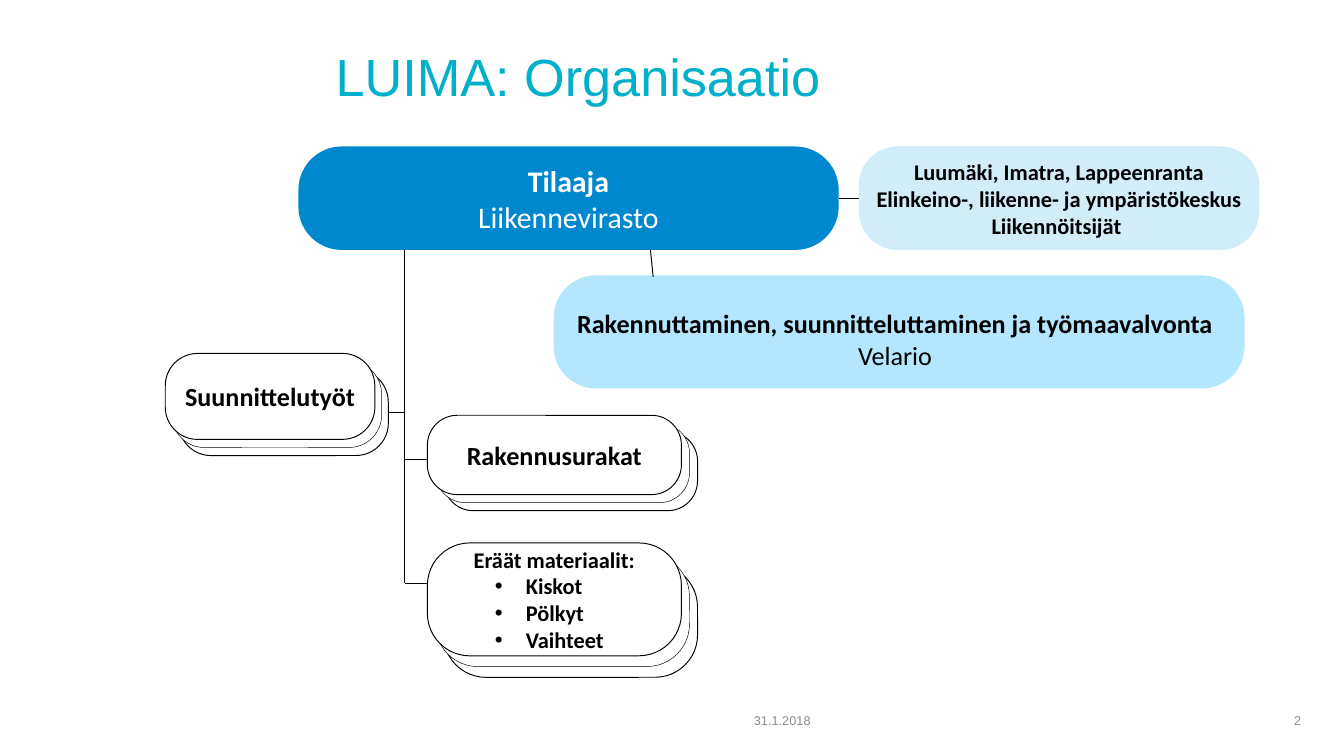
from lxml.etree import SubElement
from pptx import Presentation
from pptx.dml.color import RGBColor
from pptx.enum.shapes import MSO_CONNECTOR, MSO_SHAPE
from pptx.enum.text import MSO_ANCHOR, PP_ALIGN
from pptx.oxml.ns import qn
from pptx.util import Inches, Pt

BLACK = RGBColor(0x00, 0x00, 0x00)
WHITE = RGBColor(0xFF, 0xFF, 0xFF)
GRAY = RGBColor(0x8C, 0x8C, 0x8C)
TURQUOISE = RGBColor(0x00, 0xB0, 0xCA)
BLUE = RGBColor(0x00, 0x88, 0xCE)
SKY = RGBColor(0x85, 0xD6, 0xFF)
PALE_BLUE = RGBColor(0xB1, 0xE2, 0xF4)

# Boxes are (left, top, width, height) in inches.
SMALL_TEXTS = [("31.1.2018", (5.22, 5.21, 0.91, 0.3)), ("2", (9.37, 5.21, 0.41, 0.3))]
CLIENT = ["Tilaaja", "Liikennevirasto"]
STAKEHOLDERS = [
    "Luumäki, Imatra, Lappeenranta",
    "Elinkeino-, liikenne- ja ympäristökeskus",
    "Liikennöitsijät ",
]
MANAGEMENT = ["Rakennuttaminen, suunnitteluttaminen ja työmaavalvonta\nVelario"]
MATERIALS = ["Kiskot", "Pölkyt", "Vaihteet"]
CARD_STACKS = {
    # name: (front card box, (step right, step down), size, bullets)
    "Rakennusurakat": ((3.18, 3.09, 1.89, 0.59), (0.06, 0.06), 14, []),
    "Eräät materiaalit:": ((3.18, 4.04, 1.89, 0.84), (0.06, 0.08), 12, MATERIALS),
    "Suunnittelutyöt": ((1.23, 2.63, 1.56, 0.64), (0.05, 0.06), 14, []),
}
TRUNK_X = 3.01

presentation = Presentation()
presentation.slide_width = Inches(10)
presentation.slide_height = Inches(10 * 9 / 16)
slide = presentation.slides.add_slide(presentation.slide_layouts[6])


def write(shape, lines, size, font="Calibri", color=BLACK, bold_lines=0, bullets=(),
          align=PP_ALIGN.CENTER, anchor=MSO_ANCHOR.MIDDLE, inset=None, wrap=True, spacing=None):
    """Write lines, the first bold_lines bold, then bold bullets.

    What follows a line break inside a line is not bold.
    """
    frame = shape.text_frame
    frame.word_wrap = wrap
    frame.vertical_anchor = anchor
    if inset is not None:
        frame.margin_left = frame.margin_right = Inches(inset)
        frame.margin_top = frame.margin_bottom = Inches(inset)
    for index, text in enumerate([*lines, *bullets]):
        paragraph = frame.paragraphs[0] if index == 0 else frame.add_paragraph()
        is_bullet = index >= len(lines)
        paragraph.alignment = PP_ALIGN.LEFT if is_bullet else align
        if spacing:
            paragraph.line_spacing = spacing
        if is_bullet:
            paragraph.level = 1
            properties = paragraph._p.get_or_add_pPr()
            properties.set("marL", str(Inches(0.61)))
            properties.set("indent", str(Inches(-0.23)))
            SubElement(properties, qn("a:buFont"), typeface="Arial")
            SubElement(properties, qn("a:buChar"), char="•")
        for part_index, part in enumerate(text.split("\n")):
            if part_index:
                paragraph.add_line_break()
            run = paragraph.add_run()
            run.text = part
            run.font.name = font
            run.font.size = Pt(size)
            run.font.color.rgb = color
            run.font.bold = is_bullet or (index < bold_lines and part_index == 0)


def add_text(box, lines, size, **style):
    write(slide.shapes.add_textbox(*map(Inches, box)), lines, size, **style)


def add_rounded(box, fill, rounding=0.376, opacity=None, line_width=None):
    shape = slide.shapes.add_shape(MSO_SHAPE.ROUNDED_RECTANGLE, *map(Inches, box))
    shape.adjustments[0] = rounding
    shape.shadow.inherit = False
    shape.fill.solid()
    shape.fill.fore_color.rgb = fill
    if opacity:
        color = shape._element.spPr.find(".//" + qn("a:srgbClr"))
        SubElement(color, qn("a:alpha"), val=str(opacity * 1000))
    if line_width:
        shape.line.color.rgb = BLACK
        shape.line.width = Pt(line_width)
    else:
        shape.line.fill.background()
    return shape


def add_line(start, end, width=0.75):
    connector = slide.shapes.add_connector(MSO_CONNECTOR.STRAIGHT, *map(Inches, (*start, *end)))
    connector.line.color.rgb = BLACK
    connector.line.width = Pt(width)
    SubElement(connector._element.spPr, qn("a:effectLst"))
    return connector


def add_card_stack(name, box, step, size, bullets):
    """Draw three offset cards from back to front and return the back one."""
    left, top, width, height = box
    cards = [
        add_rounded((left + depth * step[0], top + depth * step[1], width, height),
                    WHITE, line_width=line_width)
        for depth, line_width in ((2, 0.5), (1, 0.25), (0, 0.5))
    ]
    write(cards[-1], [name], size, bold_lines=1, bullets=bullets, inset=0.03, wrap=False)
    return cards[0]


add_text((2.4, 0.34, 7.24, 0.5), ["LUIMA: Organisaatio"], 28, font="Arial",
         color=TURQUOISE, align=PP_ALIGN.LEFT, spacing=0.9)
for text, box in SMALL_TEXTS:
    add_text(box, [text], 6.8, font="Arial", color=GRAY, align=PP_ALIGN.RIGHT)

add_rounded((4.12, 2.05, 5.14, 0.84), SKY, rounding=0.372, opacity=60)
client = add_rounded((2.22, 1.09, 4.02, 0.77), BLUE, rounding=0.419)
write(client, CLIENT, 16, color=WHITE, bold_lines=1, inset=0.03, wrap=False)
stakeholders = add_rounded((6.39, 1.09, 2.98, 0.77), PALE_BLUE, rounding=0.373, opacity=60)
write(stakeholders, STAKEHOLDERS, 12, bold_lines=3, inset=0.03, wrap=False)
add_text((3.9, 2.24, 5.52, 0.57), MANAGEMENT, 14, bold_lines=1, anchor=MSO_ANCHOR.TOP)

client_link = add_line((6.24, 1.47), (6.39, 1.47), width=0.5)
client_link.begin_connect(client, 3)
client_link.end_connect(stakeholders, 1)
add_line((4.86, 2.06), (4.84, 1.86), width=0.5)
add_line((TRUNK_X, 4.34), (TRUNK_X, 1.86))
for branch_y in (3.42, 4.34):
    add_line((TRUNK_X, branch_y), (3.18, branch_y))

back_cards = {name: add_card_stack(name, *stack) for name, stack in CARD_STACKS.items()}
design_branch = add_line((2.89, 3.07), (TRUNK_X, 3.07))
design_branch.begin_connect(back_cards["Suunnittelutyöt"], 3)

presentation.save("out.pptx")
